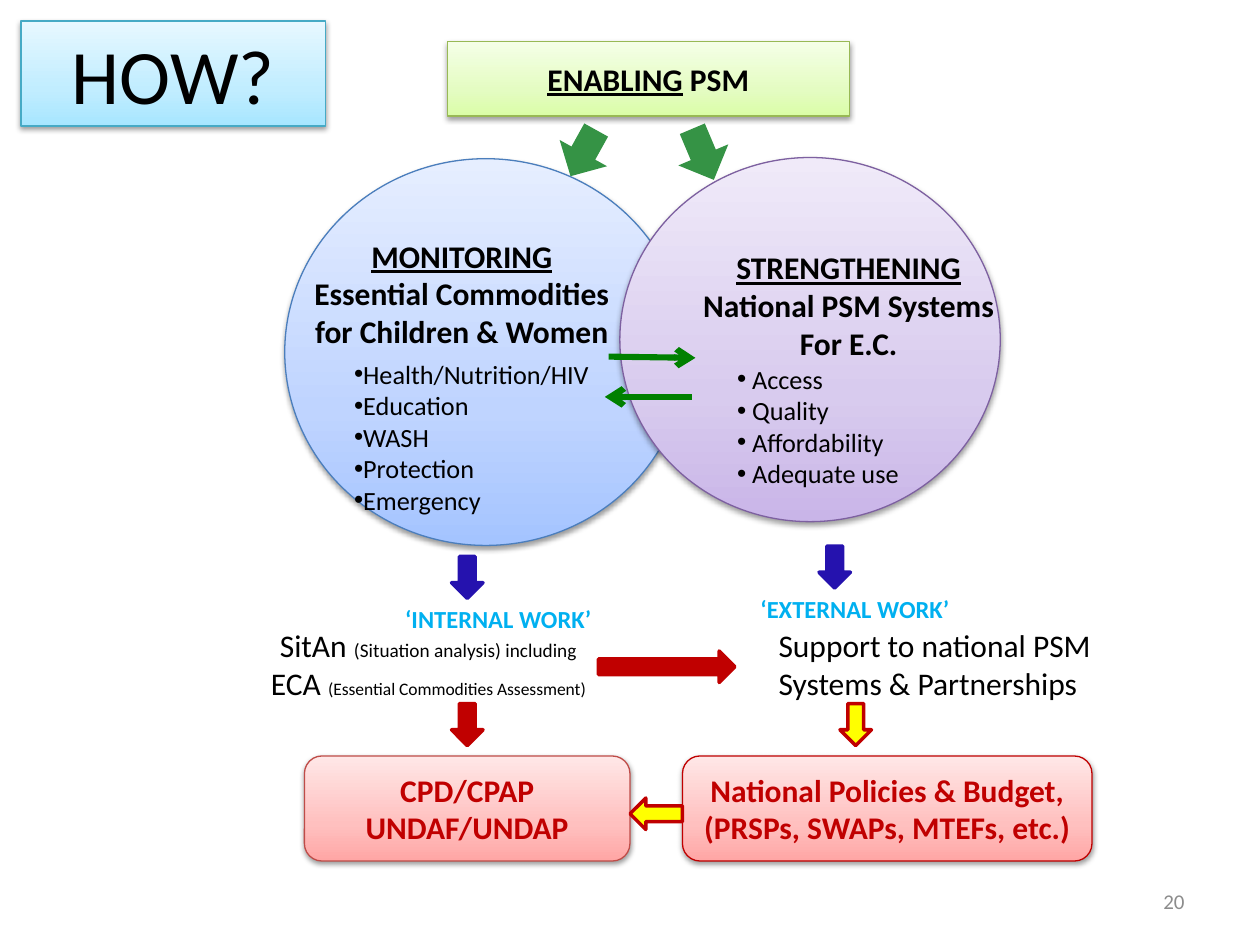
from copy import deepcopy
from dataclasses import dataclass

from lxml.etree import SubElement
from pptx import Presentation
from pptx.dml.color import RGBColor
from pptx.enum.shapes import MSO_CONNECTOR as Connector, MSO_SHAPE as Preset
from pptx.enum.text import MSO_ANCHOR as Anchor, MSO_AUTO_SIZE as AutoSize, PP_ALIGN as Align
from pptx.oxml.ns import qn
from pptx.util import Pt


@dataclass(frozen=True)
class Theme:
    font: str = "Calibri"
    title: float = 44
    heading: float = 18
    item: float = 15
    label: float = 14
    number: float = 12
    note: float = 11
    small_note: float = 10
    black: str = "000000"
    grey: str = "8C8C8C"
    sky: str = "00B0F0"
    red: str = "C00000"
    soft_red: str = "BF4C48"
    yellow: str = "FFFF00"
    indigo: str = "2512AE"
    leaf: str = "359345"
    green: str = "008000"
    lime_edge: str = "98B955"
    blue_edge: str = "4B7EBC"
    purple_edge: str = "7D60A0"
    aqua_edge: str = "46AAC5"
    lime: tuple = ("DAFDA7", "E4FCC2", "F5FFE7")
    blue: tuple = ("A4C4FF", "BFD4FF", "E6EEFF")
    purple: tuple = ("C9B5E8", "D8CBEE", "F0EAF9")
    aqua: tuple = ("A7E6FF", "C1EDFF", "E7F8FF")
    rose: tuple = ("FFA6A5", "FFC0BF", "FFE7E7")


class SlideBuilder:
    """Draws styled elements on one slide, with all lengths in points."""

    def __init__(self, slide, theme):
        self.slide = slide
        self.theme = theme

    def style_run(self, run, size, color, bold=False):
        run.font.name = self.theme.font
        run.font.size = Pt(size)
        run.font.bold = bold
        run.font.color.rgb = RGBColor.from_string(color)

    def set_text(self, shape, text, size, color=None, bold=False, align=Align.CENTER, anchor=Anchor.MIDDLE):
        frame = shape.text_frame
        frame.text = text
        frame.word_wrap = True
        frame.auto_size = AutoSize.NONE
        frame.vertical_anchor = anchor
        for paragraph in frame.paragraphs:
            paragraph.alignment = align
            for run in paragraph.runs:
                self.style_run(run, size, color or self.theme.black, bold)
        return frame.paragraphs

    def add_words(self, paragraph, text, size, bold=False):
        run = paragraph.add_run()
        run.text = text
        self.style_run(run, size, self.theme.black, bold)

    def text(self, box, text, size, **style):
        return self.set_text(self.slide.shapes.add_textbox(*map(Pt, box)), text, size, **style)

    def shade(self, shape, colors, edge):
        shape.fill.gradient()
        shape.fill.gradient_angle = 90
        properties = shape.element.spPr
        stops = properties.find(".//" + qn("a:gsLst"))
        stops.append(deepcopy(stops[0]))
        for stop, color, position in zip(shape.fill.gradient_stops, colors, (0, 0.35, 1)):
            stop.color.rgb = RGBColor.from_string(color)
            stop.position = position
        shape.line.color.rgb = RGBColor.from_string(edge)
        shape.line.width = Pt(0.75)
        shape.shadow.inherit = False
        shadow = SubElement(properties.find(qn("a:effectLst")), qn("a:outerShdw"), blurRad=str(Pt(3.1)),
                            dist=str(Pt(1.6)), dir="5400000", rotWithShape="0")
        shadow_color = SubElement(shadow, qn("a:srgbClr"), val=self.theme.black)
        SubElement(shadow_color, qn("a:alpha"), val="38000")

    def panel(self, preset, box, colors, edge):
        shape = self.slide.shapes.add_shape(preset, *map(Pt, box))
        self.shade(shape, colors, edge)
        return shape

    def block_arrow(self, preset, box, fill, edge=None, rotation=0):
        arrow = self.slide.shapes.add_shape(preset, *map(Pt, box))
        arrow.rotation = rotation
        arrow.shadow.inherit = False
        arrow.fill.solid()
        arrow.fill.fore_color.rgb = RGBColor.from_string(fill)
        if edge:
            arrow.line.color.rgb = RGBColor.from_string(edge)
            arrow.line.width = Pt(2)
        else:
            arrow.line.fill.background()

    def line_arrow(self, ends, color):
        arrow = self.slide.shapes.add_connector(Connector.STRAIGHT, *map(Pt, ends))
        arrow.line.color.rgb = RGBColor.from_string(color)
        arrow.line.width = Pt(3.5)
        properties = arrow.element.spPr
        SubElement(properties.find(qn("a:ln")), qn("a:tailEnd"), type="arrow")
        SubElement(properties, qn("a:effectLst"))

    def place(self, placeholder, box):
        placeholder.left, placeholder.top, placeholder.width, placeholder.height = map(Pt, box)
        placeholder.element.getparent().append(placeholder.element)

    def title(self, box, text, colors, edge):
        heading = self.slide.shapes.title
        self.place(heading, box)
        self.shade(heading, colors, edge)
        self.set_text(heading, text, self.theme.title)

    def bullets(self, index, box, items, hang):
        body = self.slide.placeholders[index]
        self.place(body, box)
        for paragraph in self.set_text(body, "\n".join(items), self.theme.item, align=Align.LEFT, anchor=Anchor.TOP):
            paragraph.space_before = Pt(0)
            properties = paragraph._p.get_or_add_pPr()
            properties.set("marL", str(Pt(hang)))
            properties.set("indent", str(-Pt(hang)))
            SubElement(properties, qn("a:buFont"), typeface="Arial")
            SubElement(properties, qn("a:buChar"), char="•")


def main():
    deck = Presentation()
    deck.slide_width, deck.slide_height = Pt(720), Pt(540)
    theme = Theme()
    page = SlideBuilder(deck.slides.add_slide(deck.slide_layouts[3]), theme)

    page.panel(Preset.OVAL, (162.7, 90.7, 229.7, 221), theme.blue, theme.blue_edge)
    page.panel(Preset.OVAL, (354.2, 90, 217.4, 208.1), theme.purple, theme.purple_edge)

    enabling = page.panel(Preset.RECTANGLE, (255.6, 23.8, 229.7, 42.5), theme.lime, theme.lime_edge)
    enabling_line = page.set_text(enabling, "ENABLING", theme.heading, bold=True)[0]
    enabling_line.runs[0].font.underline = True
    page.add_words(enabling_line, " PSM", theme.heading, bold=True)
    for box, rotation in (((318.2, 72, 30.2, 31), 119), ((385.9, 72.7, 31.7, 31), 67.1)):
        page.block_arrow(Preset.RIGHT_ARROW, box, theme.leaf, rotation=rotation)

    for box, heading in (
        ((162, 134.6, 203.8, 66), "MONITORING\nEssential Commodities for Children & Women"),
        ((391.7, 141.3, 186.5, 66), "STRENGTHENING\nNational PSM Systems\nFor E.C."),
    ):
        page.text(box, heading, theme.heading, bold=True)[0].runs[0].font.underline = True
    page.bullets(1, (195.1, 200.9, 180, 105.1),
                 ("Health/Nutrition/HIV", "Education", "WASH", "Protection", "Emergency"), 5)
    page.bullets(2, (414, 203.8, 180, 79.9), ("Access", "Quality", "Affordability", "Adequate use"), 8.6)
    for ends in ((347.8, 203.8, 397.4, 204.5), (395.3, 226.8, 345.6, 226.8)):
        page.line_arrow(ends, theme.green)

    page.title((12, 12, 174, 60), "HOW?", theme.aqua, theme.aqua_edge)

    for box, label in (((198, 341.7, 173.5, 24), "‘INTERNAL WORK’"), ((401.8, 335.7, 173.5, 24), "‘EXTERNAL WORK’")):
        page.text(box, label, theme.label, color=theme.sky, bold=True)
    analysis, assessment = page.text((144, 354.2, 201.6, 51.1), "SitAn \nECA ", theme.heading, anchor=Anchor.TOP)
    page.add_words(analysis, "(Situation analysis) including", theme.note)
    page.add_words(assessment, "(Essential Commodities Assessment)", theme.small_note)
    page.text((437.8, 354.2, 199.4, 51.1), "Support to national PSM\nSystems & Partnerships", theme.heading,
              align=Align.LEFT, anchor=Anchor.TOP)

    for box, edge, outcome in (
        ((174, 432, 186, 60), theme.soft_red, "CPD/CPAP\nUNDAF/UNDAP"),
        ((390, 432, 234, 60), theme.red, "National Policies & Budget, (PRSPs, SWAPs, MTEFs, etc.)"),
    ):
        page.set_text(page.panel(Preset.ROUNDED_RECTANGLE, box, theme.rose, edge), outcome, theme.heading,
                      color=theme.red, bold=True)

    for box, fill, edge, rotation in (
        ((258, 402, 18, 24), theme.red, theme.red, 0),
        ((480, 402, 18, 24), theme.yellow, theme.red, 0),
        ((258, 318, 18, 24), theme.indigo, theme.indigo, 0),
        ((468, 312, 18, 24), theme.indigo, theme.indigo, 0),
        ((366, 450, 18, 30), theme.yellow, theme.red, 90),
        ((372, 342, 18, 78), theme.red, theme.red, 270),
    ):
        page.block_arrow(Preset.DOWN_ARROW, box, fill, edge, rotation)

    page.text((516, 500.4, 168, 28.8), "20", theme.number, color=theme.grey, align=Align.RIGHT)
    deck.save("out.pptx")


if __name__ == "__main__":
    main()
